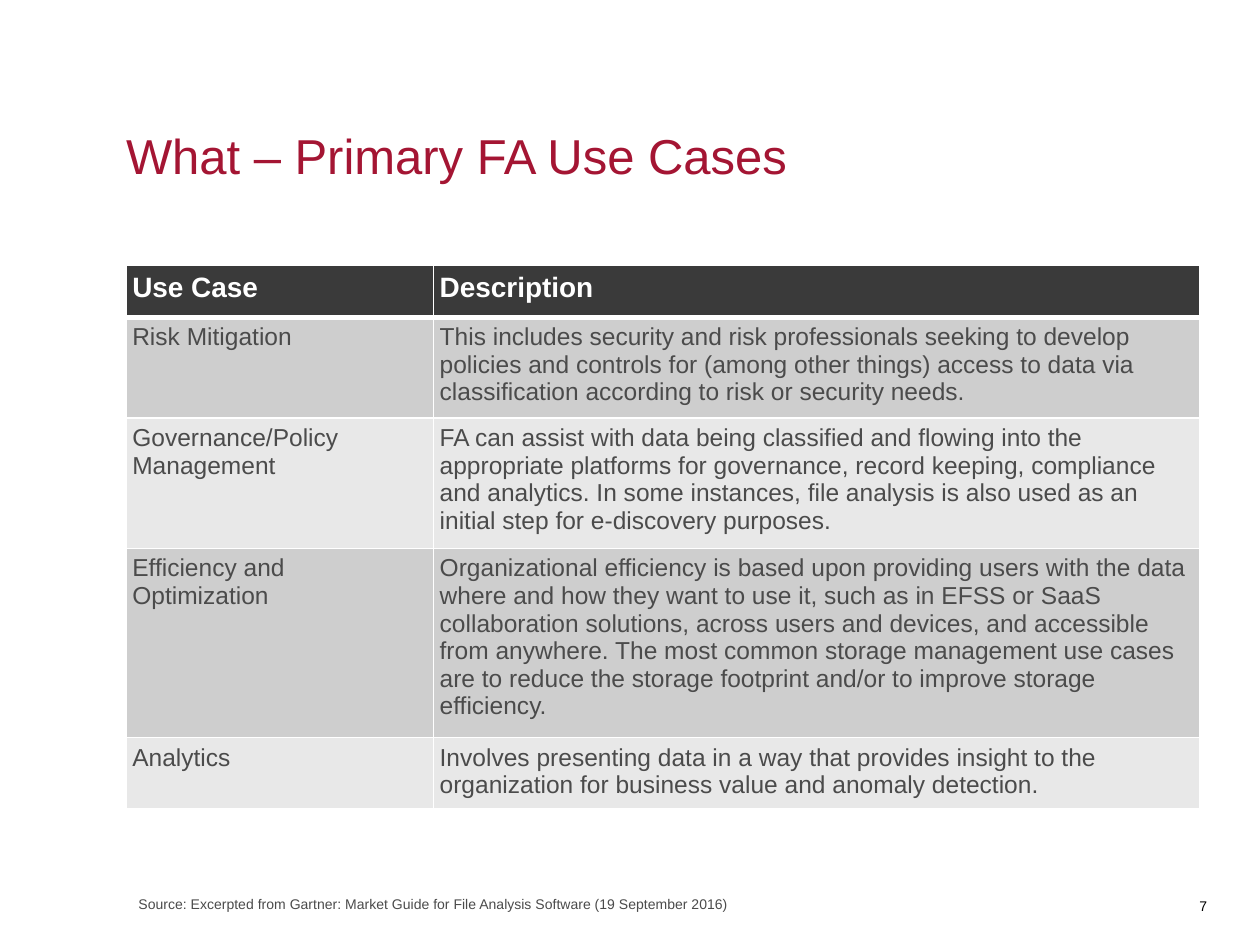
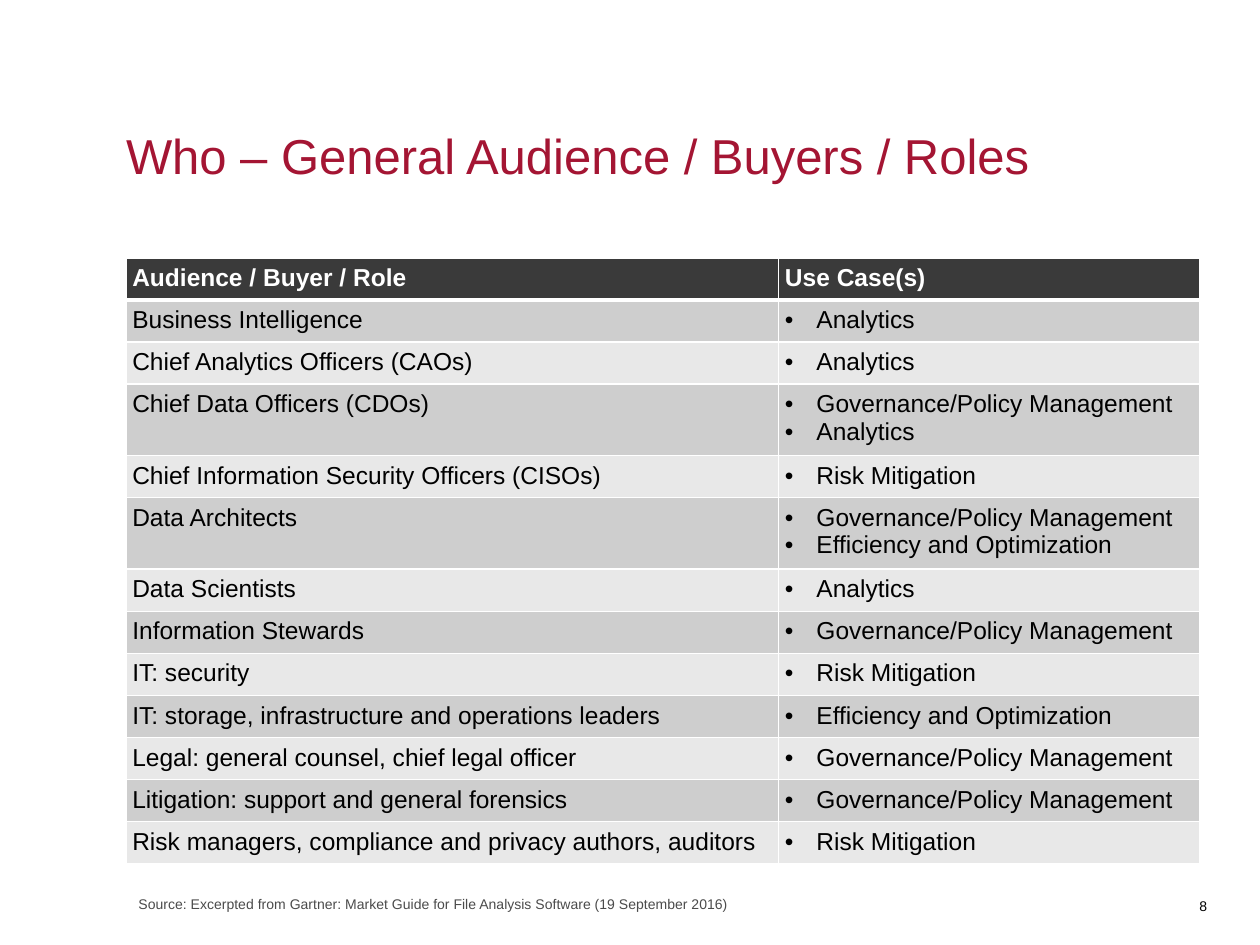
from lxml.etree import SubElement
from pptx import Presentation
from pptx.dml.color import RGBColor
from pptx.enum.text import PP_ALIGN as Align
from pptx.oxml.ns import qn
from pptx.util import Inches, Pt

RED, DARK, GRAY, BLACK, WHITE = "A41533", "3A3A3A", "4B4B4B", "000000", "FFFFFF"
BANDS = ["CECECE", "E8E8E8"]
SOURCE = ("Source: Excerpted from Gartner: Market Guide for File Analysis "
          "Software (19 September 2016)")
PAD, LINE = 0.05, 0.22
LEFT, WIDE = 0.1, 0.851

RISK, GOV = "Risk Mitigation", "Governance/Policy Management"
EFF, DATA = "Efficiency and Optimization", "Analytics"

cases = [
    ("Use Case", ["Description"], 1),
    (RISK, ["This includes security and risk professionals seeking to develop policies "
            "and controls for (among other things) access to data via classification "
            "according to risk or security needs."], 3),
    (GOV, ["FA can assist with data being classified and flowing into the appropriate "
           "platforms for governance, record keeping, compliance and analytics. In some "
           "instances, file analysis is also used as an initial step for e-discovery "
           "purposes."], 4),
    (EFF, ["Organizational efficiency is based upon providing users with the data where "
           "and how they want to use it, such as in EFSS or SaaS collaboration solutions, "
           "across users and devices, and accessible from anywhere. The most common "
           "storage management use cases are to reduce the storage footprint and/or to "
           "improve storage efficiency."], 6),
    (DATA, ["Involves presenting data in a way that provides insight to the organization "
            "for business value and anomaly detection."], 2),
]
roles = [
    ("Audience / Buyer / Role", ["Use Case(s)"], 1),
    ("Business Intelligence", [DATA], 1),
    ("Chief Analytics Officers (CAOs)", [DATA], 1),
    ("Chief Data Officers (CDOs)", [GOV, DATA], 2),
    ("Chief Information Security Officers (CISOs)", [RISK], 1),
    ("Data Architects", [GOV, EFF], 2),
    ("Data Scientists", [DATA], 1),
    ("Information Stewards", [GOV], 1),
    ("IT: security", [RISK], 1),
    ("IT: storage, infrastructure and operations leaders", [EFF], 1),
    ("Legal: general counsel, chief legal officer", [GOV], 1),
    ("Litigation: support and general forensics", [GOV], 1),
    ("Risk managers, compliance and privacy authors, auditors", [RISK], 1),
]
# title, number, rows, table top, column shares, header height, header size, ink, bullets
pages = [
    ("What – Primary FA Use Cases", 7, cases, 0.281, (0.244, 0.608), 0.41, 16, GRAY, False),
    ("Who – General Audience / Buyers / Roles", 8, roles, 0.273, (0.518, 0.334), 0.32, 14,
     BLACK, True),
]


def color(code):
    return RGBColor.from_string(code)


def write(para, text, size, ink, bold=False):
    run = para.add_run()
    run.text = text
    run.font.name, run.font.size, run.font.bold = "Arial", Pt(size), bold
    run.font.color.rgb = color(ink)


deck = Presentation()
deck.slide_width, deck.slide_height = Inches(10), Inches(7.5)
W, H = deck.slide_width, deck.slide_height

for title, number, rows, top, shares, head, big, ink, dots in pages:
    slide = deck.slides.add_slide(deck.slide_layouts[6])

    labels = [
        (title, LEFT, 0.127, WIDE, 0.136, 28, RED),
        (SOURCE, LEFT, 0.941, WIDE, 0.032, 8, GRAY),
        (str(number), 0.931, 0.943, 0.048, 0.035, 8, BLACK),
    ]
    for text, x, y, w, h, size, hue in labels:
        box = slide.shapes.add_textbox(int(W * x), int(H * y), int(W * w), int(H * h))
        frame = box.text_frame
        frame.word_wrap = True
        if text == title:
            frame.margin_left = frame.margin_right = frame.margin_bottom = 0
            frame.margin_top = Inches(0.04)
        if text == str(number):
            frame.paragraphs[0].alignment = Align.CENTER
        write(frame.paragraphs[0], text, size, hue)

    highs = [head] + [2 * PAD + LINE * count for _, _, count in rows[1:]]
    table = slide.shapes.add_table(len(rows), 2, int(W * LEFT), int(H * top),
                                   int(W * WIDE), Inches(sum(highs))).table
    for col, share in zip(table.columns, shares):
        col.width = int(W * share)

    for r, (name, items, _) in enumerate(rows):
        table.rows[r].height = Inches(highs[r])
        for c, lines in enumerate([[name], items]):
            cell = table.cell(r, c)
            cell.margin_left = cell.margin_right = Inches(PAD)
            cell.margin_top = cell.margin_bottom = Inches(PAD)
            props = cell._tc.get_or_add_tcPr()
            for side in "LRTB":
                thick = (r, side) in [(0, "B"), (1, "T")]
                edge = SubElement(props, qn("a:ln" + side), w=str(Pt(3 if thick else 1)))
                fill = SubElement(edge, qn("a:solidFill"))
                SubElement(fill, qn("a:srgbClr"), val=WHITE)
            cell.fill.solid()
            cell.fill.fore_color.rgb = color(BANDS[(r - 1) % 2] if r else DARK)

            frame = cell.text_frame
            for i, text in enumerate(lines):
                para = frame.add_paragraph() if i else frame.paragraphs[0]
                if dots and r and c:
                    form = para._p.get_or_add_pPr()
                    form.set("marL", str(Inches(0.25)))
                    form.set("indent", str(-Inches(0.25)))
                    SubElement(form, qn("a:buFont"), typeface="Arial")
                    SubElement(form, qn("a:buChar"), char="•")
                write(para, text, 14 if r else big, ink if r else WHITE, r == 0)

deck.save("out.pptx")
